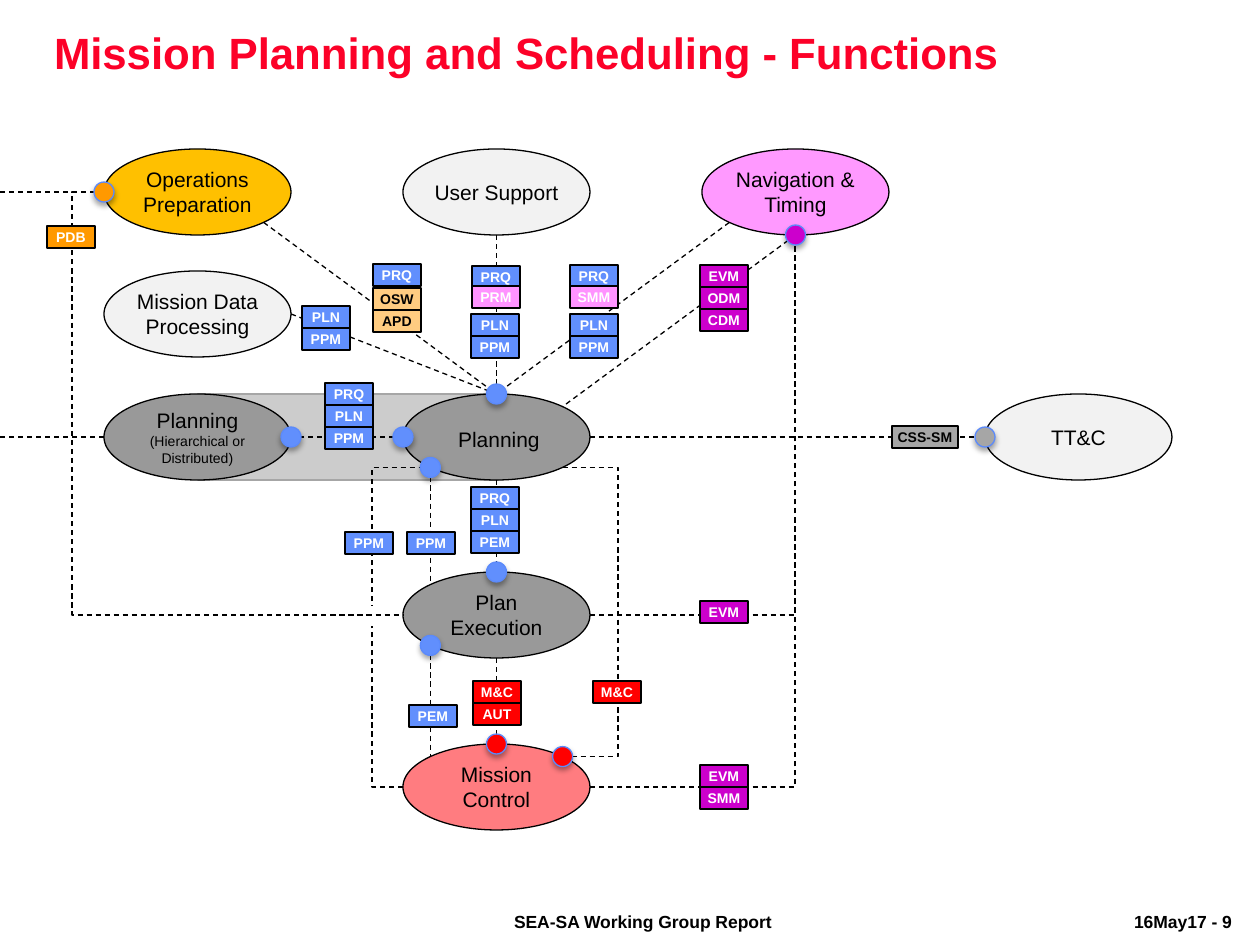
from math import cos, radians, sin

from lxml import etree
from pptx import Presentation
from pptx.dml.color import RGBColor
from pptx.enum.dml import MSO_LINE
from pptx.enum.shapes import MSO_CONNECTOR, MSO_SHAPE
from pptx.enum.text import MSO_ANCHOR, MSO_AUTO_SIZE, PP_ALIGN
from pptx.oxml.ns import qn
from pptx.util import Inches, Pt

OVAL, RECT = MSO_SHAPE.OVAL, MSO_SHAPE.RECTANGLE
STRAIGHT, ELBOW = MSO_CONNECTOR.STRAIGHT, MSO_CONNECTOR.ELBOW
DASH = MSO_LINE.DASH
TOP, MIDDLE = MSO_ANCHOR.TOP, MSO_ANCHOR.MIDDLE
CENTER, LEFT = PP_ALIGN.CENTER, PP_ALIGN.LEFT
FIT = MSO_AUTO_SIZE.SHAPE_TO_FIT_TEXT

PX_PER_INCH = 126
BLACK, WHITE, RED = "000000", "FFFFFF", "FF0000"
BLUE, PURPLE, PINK, PEACH = "618FFD", "CC00CC", "FF93FF", "FFCC81"
ORANGE, PALE, GREY, SILVER = "FF9900", "F2F2F2", "999999", "A6A6A6"

# Connection sites of an ellipse, counter-clockwise from the top
N, NW, W, SW, S, SE, E, NE = range(8)


def px(n):
    return round(Inches(n / PX_PER_INCH))


def rgb(value):
    return RGBColor.from_string(value)


class Diagram:
    font = "Arial"
    line_width = Pt(0.75)
    node_size = 187, 86
    tag_size = 48, 22
    dot_size = 20

    def __init__(self, slide):
        self.slide = slide

    def run(self, p, text, size, color=BLACK, bold=False):
        r = p.add_run()
        r.text = text
        r.font.name, r.font.size, r.font.bold = self.font, Pt(size), bold
        r.font.color.rgb = rgb(color)

    def frame(self, sp, insets, anchor=TOP, wrap=True, align=CENTER):
        """Format the text frame and return its first paragraph."""
        tf = sp.text_frame
        tf.margin_left, tf.margin_top, tf.margin_right, tf.margin_bottom = map(px, insets)
        tf.vertical_anchor, tf.word_wrap = anchor, wrap
        p = tf.paragraphs[0]
        p.alignment = align
        return p

    def shape(self, kind, x, y, w, h, fill, line=BLACK):
        sp = self.slide.shapes.add_shape(kind, px(x), px(y), px(w), px(h))
        sp.shadow.inherit = False
        sp.fill.solid()
        sp.fill.fore_color.rgb = rgb(fill)
        if line:
            sp.line.color.rgb = rgb(line)
            sp.line.width = self.line_width
        else:
            sp.line.fill.background()
        return sp

    def title(self, text):
        sp = self.slide.shapes.title
        sp.left, sp.top, sp.width, sp.height = px(25), px(26), px(1002), px(69)
        p = self.frame(sp, (12, 6, 12, 6))
        p.line_spacing = 0.9
        self.run(p, text, 25, "FC0128", True)

    def footer(self, x, w, text):
        sp = self.slide.shapes.add_textbox(px(x), px(906), px(w), px(33))
        p = self.frame(sp, (11, 5, 11, 5), wrap=False, align=LEFT)
        self.run(p, text, 10, bold=True)

    def node(self, x, y, fill, lines, insets=(0, 6, 0, 6), note=None):
        sp = self.shape(OVAL, x, y, *self.node_size, fill)
        p = self.frame(sp, insets, MIDDLE)
        for i, text in enumerate(lines):
            if i:
                p.add_line_break()
            self.run(p, text, 12)
        if note:
            p.add_line_break()
            self.run(p, note, 8)
        return sp

    def site(self, node, k):
        """Return the EMU point of connection site k on an ellipse."""
        angle = radians(90 + 45 * k)
        rx, ry = node.width / 2, node.height / 2
        return (round(node.left + rx + rx * cos(angle)),
                round(node.top + ry - ry * sin(angle)))

    def connector(self, kind, begin, end):
        cx = self.slide.shapes.add_connector(kind, *begin, *end)
        cx.line.color.rgb = rgb(BLACK)
        cx.line.width, cx.line.dash_style = self.line_width, DASH
        etree.SubElement(cx._element.spPr, qn("a:effectLst"))
        return cx

    def link(self, a, k, b, j):
        """Join site k of ellipse a to site j of ellipse b."""
        cx = self.connector(STRAIGHT, self.site(a, k), self.site(b, j))
        ends = cx._element.find(".//" + qn("p:cNvCxnSpPr"))
        for tag, node, idx in (("a:stCxn", a, k), ("a:endCxn", b, j)):
            etree.SubElement(ends, qn(tag), id=str(node.shape_id), idx=str(idx))

    def elbow(self, begin, end, via):
        """Run horizontally to x = via, then vertically, then to the end."""
        cx = self.connector(ELBOW, begin, end)
        adj = round(100000 * (px(via) - begin[0]) / (end[0] - begin[0]))
        guides = cx._element.find(".//" + qn("a:avLst"))
        etree.SubElement(guides, qn("a:gd"), name="adj1", fmla=f"val {adj}")

    def tags(self, x, y, fill, names, color=WHITE, w=None):
        """Stack labels downwards from (x, y)."""
        width, h = self.tag_size
        for i, name in enumerate(names.split()):
            sp = self.shape(RECT, x, y + i * h, w or width, h, fill)
            p = self.frame(sp, (3, 3, 3, 3))
            sp.text_frame.auto_size = FIT
            self.run(p, name, 8, color, True)

    def dot(self, node, k, fill):
        x, y = self.site(node, k)
        d = self.dot_size
        sp = self.shape(OVAL, 0, 0, d, d, fill, "5B8AFB")
        sp.left, sp.top = x - sp.width // 2, y - sp.height // 2
        effects = sp._element.spPr.find(qn("a:effectLst"))
        shadow = etree.SubElement(effects, qn("a:outerShdw"), blurRad=str(Pt(3.1)),
                                  dist=str(Pt(1.8)), dir="5400000", rotWithShape="0")
        color = etree.SubElement(shadow, qn("a:srgbClr"), val=BLACK)
        etree.SubElement(color, qn("a:alpha"), val="35000")


def main():
    prs = Presentation()
    prs.slide_width, prs.slide_height = Inches(10), Inches(7.5)
    s = Diagram(prs.slides.add_slide(prs.slide_layouts[5]))

    s.title("Mission Planning and Scheduling - Functions")
    s.footer(1123, 134, "16May17 - 9")
    s.footer(503, 285, "SEA-SA Working Group Report")

    s.shape(RECT, 198, 394, 300, 86, "CCCCCC", SILVER)
    planning = s.node(403, 394, GREY, ["Planning"], (5, 5, 0, 0))
    execution = s.node(403, 572, GREY, ["Plan Execution"])
    navigation = s.node(702, 149, "FF99FF", ["Navigation & Timing"])
    control = s.node(403, 744, "FF7C80", ["Mission", "Control"])
    operations = s.node(104, 149, "FFC000", ["Operations", "Preparation"])
    user = s.node(403, 149, PALE, ["User Support"])
    ttc = s.node(985, 394, PALE, ["TT&C"])
    partner = s.node(104, 394, GREY, ["Planning"], note="(Hierarchical or Distributed)")
    data = s.node(104, 271, PALE, ["Mission Data Processing"])

    for a, k, b, j in (
        (user, S, planning, N), (operations, SE, planning, N),
        (navigation, SW, planning, N), (data, E, planning, N),
        (navigation, S, planning, NE), (planning, E, ttc, W),
        (planning, W, partner, E), (planning, S, execution, N),
        (execution, S, control, N), (planning, SW, execution, NW),
        (execution, SW, control, NW),
    ):
        s.link(a, k, b, j)
    for node in (operations, partner):
        x, y = s.site(node, W)
        s.connector(STRAIGHT, (0, y), (x, y))

    for node in (execution, control):
        s.elbow(s.site(node, E), s.site(navigation, S), 795)
    s.elbow(s.site(planning, SE), (px(618), px(681)), 618)
    s.elbow(s.site(control, NE), (px(618), px(703)), 618)
    s.elbow(s.site(control, W), s.site(planning, SW), 372)
    s.shape(OVAL, 362, 606, 20, 20, WHITE, None)  # gap where two lines cross
    s.elbow(s.site(operations, W), s.site(execution, W), 72)

    for x, y, fill, names in (
        (47, 226, ORANGE, "PDB"), (373, 264, BLUE, "PRQ"),
        (472, 266, BLUE, "PRQ"), (472, 286, PINK, "PRM"),
        (570, 265, BLUE, "PRQ"), (570, 286, PINK, "SMM"),
        (471, 314, BLUE, "PLN PPM"), (570, 314, BLUE, "PLN PPM"),
        (302, 306, BLUE, "PLN PPM"), (325, 383, BLUE, "PRQ PLN PPM"),
        (471, 487, BLUE, "PRQ PLN PEM"), (345, 532, BLUE, "PPM"),
        (407, 532, BLUE, "PPM"), (409, 705, BLUE, "PEM"),
        (700, 265, PURPLE, "EVM ODM CDM"), (700, 601, PURPLE, "EVM"),
        (700, 765, PURPLE, "EVM SMM"),
        (473, 681, RED, "M&C AUT"), (593, 681, RED, "M&C"),
    ):
        s.tags(x, y, fill, names)
    s.tags(373, 288, PEACH, "OSW APD", BLACK)
    s.tags(892, 426, SILVER, "CSS-SM", BLACK, 66)

    for node, k, fill in (
        (planning, N, BLUE), (planning, W, BLUE), (planning, SW, BLUE),
        (partner, E, BLUE), (execution, N, BLUE), (execution, SW, BLUE),
        (control, N, RED), (control, NE, RED), (navigation, S, PURPLE),
        (operations, W, ORANGE), (ttc, W, SILVER),
    ):
        s.dot(node, k, fill)

    prs.save("out.pptx")


if __name__ == "__main__":
    main()
